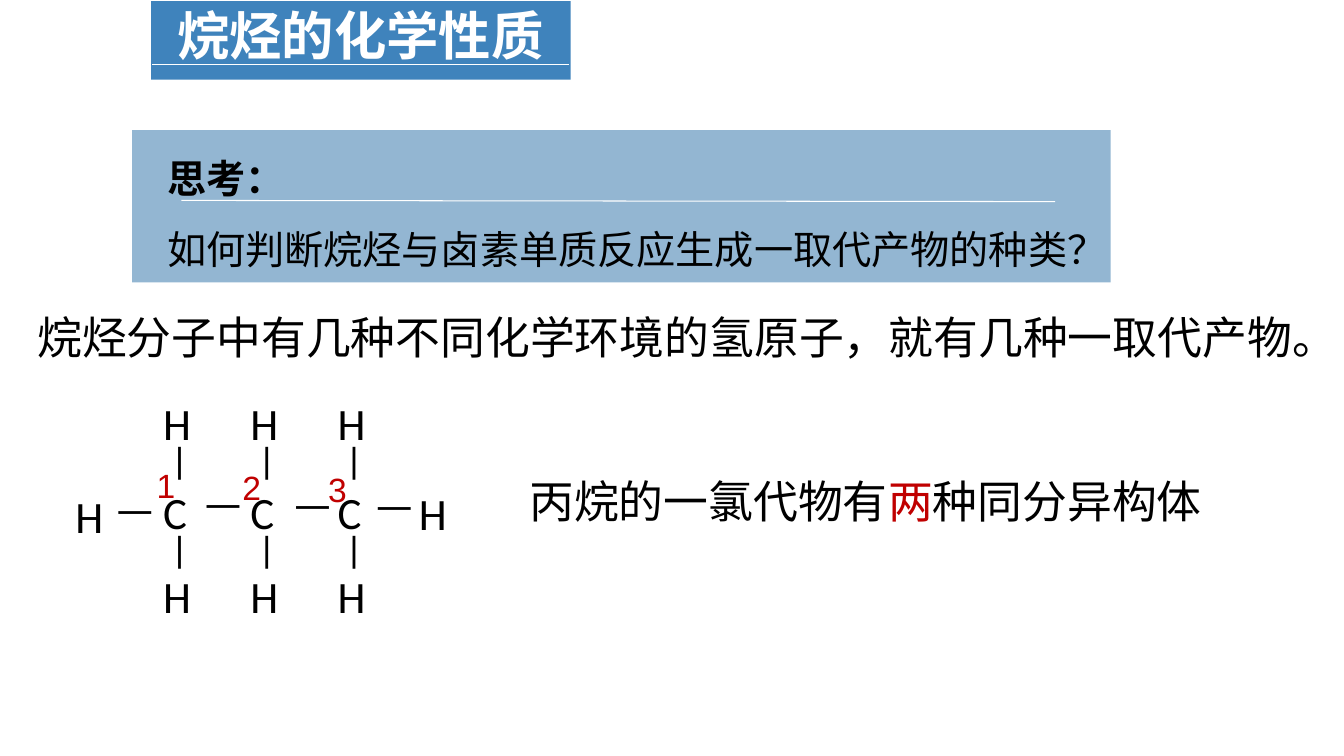
"""Build a chemistry slide on alkane substitution with the structure of propane."""
from dataclasses import dataclass

from lxml import etree
from pptx import Presentation
from pptx import util as u
from pptx.dml.color import RGBColor
from pptx.enum import shapes, text
from pptx.oxml import ns


@dataclass(frozen=True)
class Theme:
    banner: str = "3F83BC"
    panel: str = "93B6D2"
    white: str = "FFFFFF"
    ink: str = "000000"
    accent: str = "C00000"
    chinese: str = "Noto Sans CJK SC"
    atom: str = "Calibri"
    number: str = "Arial"
    title_size: float = 37.4
    question_size: float = 28
    body_size: float = 32
    number_size: float = 24


theme = Theme()
deck = Presentation()
deck.slide_width, deck.slide_height = u.Cm(33.87), u.Cm(19.05)
page = deck.slides.add_slide(deck.slide_layouts[5])


def add_span(para, wording, size, font, color=theme.ink, bold=False):
    span = para.add_run()
    span.text = wording
    span.font.size, span.font.name, span.font.bold = u.Pt(size), font, bold
    span.font.color.rgb = RGBColor.from_string(color)
    east_asian = etree.SubElement(span.font._element, ns.qn("a:ea"))
    east_asian.set("typeface", font)


def add_box(left, top, width, height, inset=0.15, wrap=True):
    box = page.shapes.add_textbox(u.Cm(left), u.Cm(top), u.Cm(width), u.Cm(height))
    frame = box.text_frame
    frame.word_wrap = wrap
    frame.vertical_anchor = text.MSO_ANCHOR.MIDDLE
    frame.margin_left = frame.margin_right = u.Cm(inset)
    frame.margin_top = frame.margin_bottom = u.Cm(0.15)
    return box


panels = [
    (theme.banner, (3.81, 0.03, 10.57, 1.98), (3.84, 1.63, 14.35, 1.63)),
    (theme.panel, (3.33, 3.28, 24.66, 3.84), (4.57, 5.05, 26.59, 5.08)),
]
rules = []
for color, area, ends in panels:
    panel = page.shapes.add_shape(shapes.MSO_SHAPE.RECTANGLE, *map(u.Cm, area))
    panel.shadow.inherit = False
    panel.fill.solid()
    panel.fill.fore_color.rgb = RGBColor.from_string(color)
    panel.line.fill.background()
    rule = page.shapes.add_connector(shapes.MSO_CONNECTOR.STRAIGHT, *map(u.Cm, ends))
    rule.line.color.rgb = RGBColor.from_string(theme.white)
    rule.line.width = u.Pt(0.75)
    etree.SubElement(rule._element.spPr, ns.qn("a:effectLst"))
    rules.append(rule)

title = page.shapes.title
title.left, title.top, title.width, title.height = map(u.Cm, (3.68, -0.05, 10.82, 1.85))
title.text_frame.vertical_anchor = text.MSO_ANCHOR.TOP
title.text_frame.auto_size = text.MSO_AUTO_SIZE.NONE
title_para = title.text_frame.paragraphs[0]
title_para.alignment = text.PP_ALIGN.CENTER
add_span(title_para, "烷烃的化学性质", theme.title_size, theme.chinese, theme.white, True)
rules[0]._element.addnext(title._element)

question = add_box(3.96, 3.15, 23.42, 3.84, inset=0.25).text_frame
question.vertical_anchor = text.MSO_ANCHOR.TOP
question_paras = [question.paragraphs[0], question.add_paragraph()]
question_lines = ["思考：", "如何判断烷烃与卤素单质反应生成一取代产物的种类？"]
for para, line, bold in zip(question_paras, question_lines, (True, False)):
    para.line_spacing = 1.5
    add_span(para, line, theme.question_size, theme.chinese, bold=bold)

answer = add_box(0.79, 6.98, 33.08, 2.34, wrap=False).text_frame.paragraphs[0]
answer.line_spacing = 1.5
add_span(answer, "烷烃分子中有几种不同化学环境的氢原子，就有几种一取代产物。",
         theme.body_size, theme.chinese)

conclusion = add_box(13.13, 11.79, 17.37, 1.65, wrap=False).text_frame.paragraphs[0]
conclusion.alignment = text.PP_ALIGN.CENTER
for wording, color in [("丙烷的一氯代物有", theme.ink), ("两", theme.accent),
                       ("种同分异构体", theme.ink)]:
    add_span(conclusion, wording, theme.body_size, theme.chinese, color)

carbon_pitch = 2.2
atoms = [("H", 1.75, 13.0), ("H", 10.41, 12.92)]
bonds = [(3.9, 12.8, 0), (5.12, 12.9, 180), (7.38, 12.93, 180), (9.44, 12.95, 180)]
for index in range(3):
    column = 3.96 + carbon_pitch * index
    atoms += [("H", column, 10.64), ("C", column, 12.9), ("H", column, 15.01)]
    bonds += [(column + 0.7, 12.19, 90), (column + 0.7, 14.44, 90)]

for symbol, left, middle in atoms:
    para = add_box(left, middle - 0.8, 2.4, 1.6).text_frame.paragraphs[0]
    add_span(para, symbol, theme.body_size, theme.atom)

bond_size = 2.32
for center, middle, angle in bonds:
    bond = add_box(center - bond_size / 2, middle - bond_size / 2, bond_size, bond_size)
    bond.rotation = angle
    add_span(bond.text_frame.paragraphs[0], "—", theme.body_size, theme.atom)

for index in range(3):
    number = add_box(3.7 + 2.16 * index, 11.05 + 0.05 * index, 1.8, 1.8, inset=0.25)
    number.text_frame.vertical_anchor = text.MSO_ANCHOR.TOP
    para = number.text_frame.paragraphs[0]
    para.line_spacing = 1.5
    add_span(para, str(index + 1), theme.number_size, theme.number, theme.accent)

deck.save("out.pptx")
